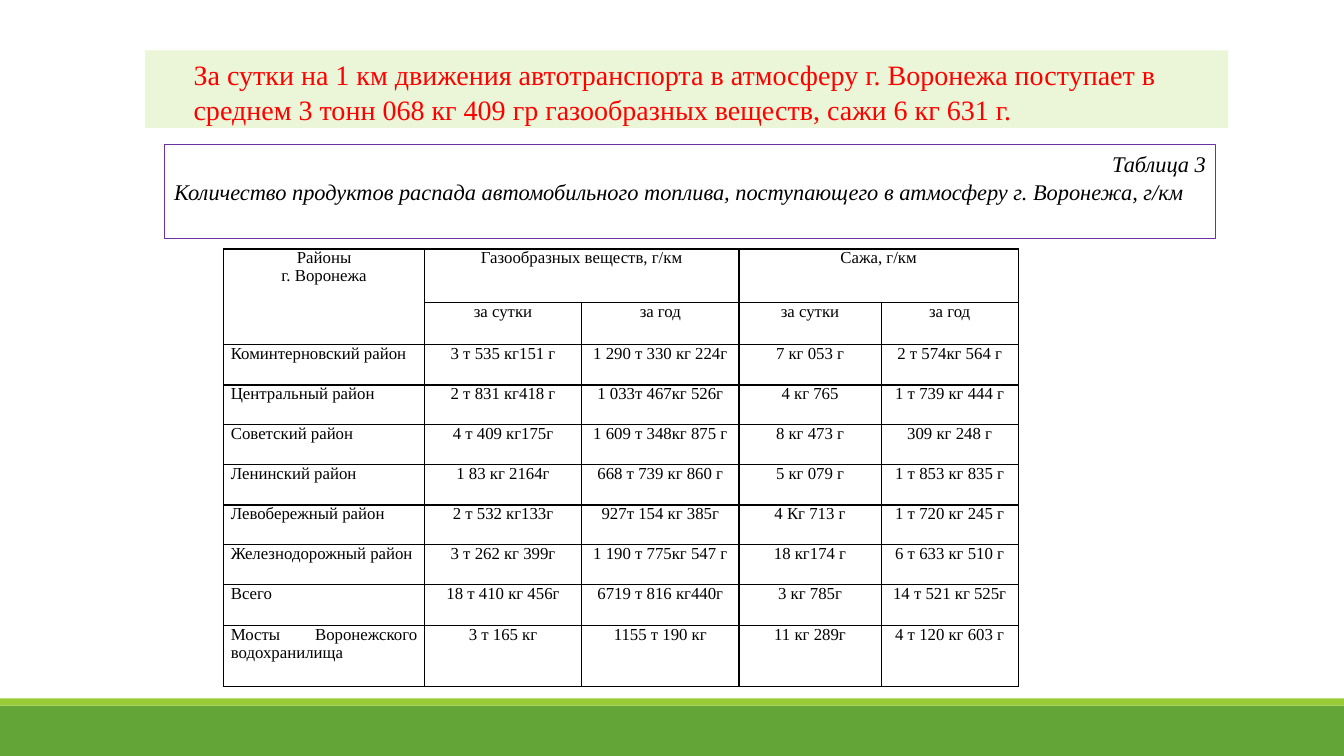
from lxml.etree import SubElement
from pptx import Presentation
from pptx.dml.color import RGBColor
from pptx.enum.shapes import MSO_SHAPE
from pptx.enum.text import MSO_ANCHOR, PP_ALIGN
from pptx.oxml.ns import qn
from pptx.util import Inches, Pt

BLACK = RGBColor(0x00, 0x00, 0x00)
RED = RGBColor(0xFF, 0x00, 0x00)
PURPLE = RGBColor(0x70, 0x30, 0xA0)
PALE_GREEN = RGBColor(0xEB, 0xF5, 0xD7)
LIME = RGBColor(0x99, 0xCB, 0x38)
GREEN = RGBColor(0x63, 0xA5, 0x37)

FONT = "Times New Roman"
HEADLINE = {"name": FONT, "size": Pt(20)}
CAPTION = {"name": FONT, "size": Pt(16), "italic": True}
CELL = {"name": FONT, "size": Pt(12)}
CELL_MARGINS = {
    "margin_left": Inches(0.07),
    "margin_right": Inches(0.07),
    "margin_top": Inches(0.01),
    "margin_bottom": 0,
}

COLUMNS = [1.99, 1.56, 1.56, 1.41, 1.36]
ROW_HEIGHTS = [0.53, 0.42, 0.4, 0.39, 0.4, 0.4, 0.39, 0.4, 0.41, 0.6]
MERGES = [(0, 0, 1, 0), (0, 1, 0, 2), (0, 3, 0, 4)]
ROWS = [
    ["Районы\nг. Воронежа", "Газообразных веществ, г/км", "", "Сажа, г/км", ""],
    ["", "за сутки", "за год", "за сутки", "за год"],
    ["Коминтерновский район", "3 т 535 кг151 г", "1 290 т 330 кг 224г", "7 кг 053 г", "2 т 574кг 564 г"],
    ["Центральный район", "2 т 831 кг418 г", "1 033т 467кг 526г", "4 кг 765", "1 т 739 кг 444 г"],
    ["Советский район", "4 т 409 кг175г", "1 609 т 348кг 875 г", "8 кг 473 г", "309 кг 248 г"],
    ["Ленинский район", "1 83 кг 2164г", "668 т 739 кг 860 г", "5 кг 079 г", "1 т 853 кг 835 г"],
    ["Левобережный район", "2 т 532 кг133г", "927т 154 кг 385г", "4 Кг 713 г", "1 т 720 кг 245 г"],
    ["Железнодорожный район", "3 т 262 кг 399г", "1 190 т 775кг 547 г", "18 кг174 г", "6 т 633 кг 510 г"],
    ["Всего", "18 т 410 кг 456г", "6719 т 816 кг440г", "3 кг 785г", "14 т 521 кг 525г"],
    ["Мосты Воронежского водохранилища", "3 т 165 кг", "1155 т 190 кг", "11 кг 289г", "4 т 120 кг 603 г"],
]


def set_attrs(target, values):
    for name, value in values.items():
        setattr(target, name, value)


def add_rect(slide, box, fill=None, line=None):
    sp = slide.shapes.add_shape(MSO_SHAPE.RECTANGLE, *map(Inches, box))
    sp.shadow.inherit = False
    if fill is None:
        sp.fill.background()
    else:
        sp.fill.solid()
        sp.fill.fore_color.rgb = fill
    if line is None:
        sp.line.fill.background()
    else:
        sp.line.color.rgb = line
        sp.line.width = Pt(0.75)
    return sp


def write_text(tf, text, align, font, color=BLACK, spacing=1.05):
    tf.text = text
    for p in tf.paragraphs:
        set_attrs(p, {"alignment": align, "line_spacing": spacing})
        set_attrs(p.font, font)
        p.font.color.rgb = color


def add_footer(slide, box):
    left, top, width, height = box
    stripe = 0.07
    add_rect(slide, (left, top + stripe, width, height - stripe), GREEN)
    add_rect(slide, (left, top, width, stripe), LIME)


def add_headline(slide, box):
    tf = add_rect(slide, box, PALE_GREEN).text_frame
    set_attrs(tf, {"word_wrap": True, "margin_left": Inches(0.48),
                   "vertical_anchor": MSO_ANCHOR.TOP})
    write_text(
        tf,
        "За сутки на 1 км движения автотранспорта в атмосферу г. Воронежа поступает "
        "в среднем 3 тонн 068 кг 409 гр газообразных веществ, сажи 6 кг 631 г.",
        PP_ALIGN.LEFT, HEADLINE, RED)


def add_caption(slide, box):
    tf = add_rect(slide, box, line=PURPLE).text_frame
    set_attrs(tf, {"word_wrap": True, "vertical_anchor": MSO_ANCHOR.TOP})
    write_text(
        tf,
        "Таблица 3\nКоличество продуктов распада автомобильного топлива, "
        "поступающего в атмосферу г. Воронежа, г/км",
        PP_ALIGN.LEFT, CAPTION)
    tf.paragraphs[0].alignment = PP_ALIGN.RIGHT


def add_borders(cell):
    tcPr = cell._tc.get_or_add_tcPr()
    for i, side in enumerate(("a:lnL", "a:lnR", "a:lnT", "a:lnB")):
        ln = SubElement(tcPr, qn(side), w=str(Pt(1)))
        fill = SubElement(ln, qn("a:solidFill"))
        SubElement(fill, qn("a:srgbClr"), val=str(BLACK))
        tcPr.insert(i, ln)


def add_emissions_table(slide, box):
    table = slide.shapes.add_table(len(ROWS), len(COLUMNS), *map(Inches, box)).table
    set_attrs(table, {"first_row": False, "horz_banding": False})
    for column, width in zip(table.columns, COLUMNS):
        column.width = Inches(width)
    for row, height in zip(table.rows, ROW_HEIGHTS):
        row.height = Inches(height)
    for r, values in enumerate(ROWS):
        for c, value in enumerate(values):
            cell = table.cell(r, c)
            set_attrs(cell, CELL_MARGINS)
            cell.fill.background()
            add_borders(cell)
            align = PP_ALIGN.JUSTIFY if c == 0 and r > 1 else PP_ALIGN.CENTER
            write_text(cell.text_frame, value, align, CELL, spacing=0.93)
    for top, left, bottom, right in MERGES:
        table.cell(top, left).merge(table.cell(bottom, right))


def main():
    prs = Presentation()
    set_attrs(prs, {"slide_width": Inches(13.33), "slide_height": Inches(7.5)})
    slide = prs.slides.add_slide(prs.slide_layouts[6])
    add_footer(slide, (0, 6.93, 13.33, 0.57))
    add_headline(slide, (1.44, 0.5, 10.74, 0.77))
    add_emissions_table(slide, (2.22, 2.47, sum(COLUMNS), sum(ROW_HEIGHTS)))
    add_caption(slide, (1.63, 1.43, 10.43, 0.94))
    prs.save("out.pptx")


if __name__ == "__main__":
    main()
